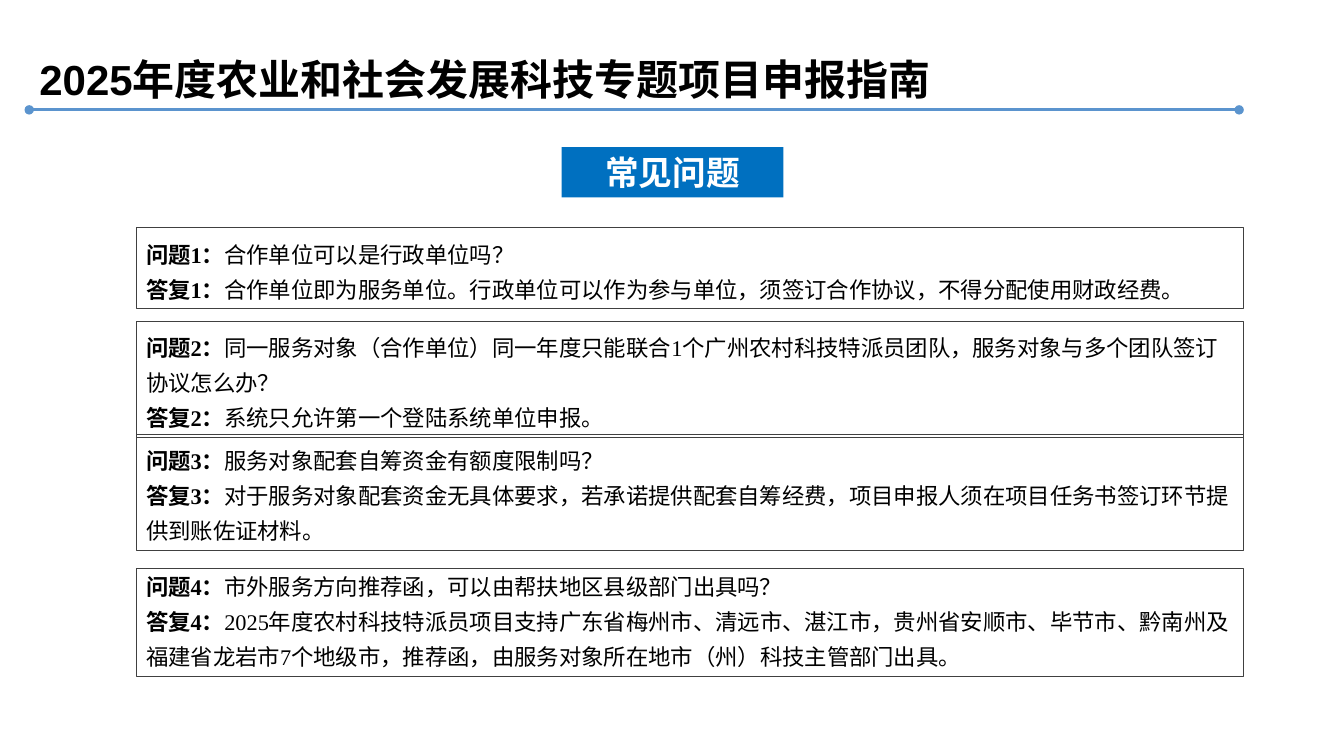
from lxml.etree import SubElement
from pptx import Presentation
from pptx.dml.color import RGBColor
from pptx.enum.shapes import MSO_CONNECTOR, MSO_SHAPE
from pptx.enum.text import MSO_ANCHOR, MSO_AUTO_SIZE, PP_ALIGN
from pptx.oxml.ns import qn
from pptx.util import Inches, Pt

COLORS = {"text": "000000", "rule": "5B94CE", "banner": "0070C0",
          "banner_text": "FFFFFF", "border": "404040"}
HEADING_FONT, BODY_FONT = "Arial", "Times New Roman"
TITLE = "2025年度农业和社会发展科技专题项目申报指南"
CARD_LEFT, CARD_WIDTH = 1.35, 10.98

# top, height, line spacing of the question, question, answer
FAQ = [
    (2.26, 0.8, 1.3, "合作单位可以是行政单位吗？",
     "合作单位即为服务单位。行政单位可以作为参与单位，须签订合作协议，不得分配使用财政经费。"),
    (3.19, 1.15, 1.3,
     "同一服务对象（合作单位）同一年度只能联合1个广州农村科技特派员团队，服务对象与多个团队签订协议怎么办？",
     "系统只允许第一个登陆系统单位申报。"),
    (4.31, 1.15, 1.3, "服务对象配套自筹资金有额度限制吗？",
     "对于服务对象配套资金无具体要求，若承诺提供配套自筹经费，项目申报人须在项目任务书签订环节提供到账佐证材料。"),
    (5.64, 1.07, 1.0, "市外服务方向推荐函，可以由帮扶地区县级部门出具吗？",
     "2025年度农村科技特派员项目支持广东省梅州市、清远市、湛江市，贵州省安顺市、毕节市、黔南州"
     "及福建省龙岩市7个地级市，推荐函，由服务对象所在地市（州）科技主管部门出具。"),
]


def color(name):
    return RGBColor.from_string(COLORS[name])


def add_run(paragraph, text, size, font, bold=True, ink="text"):
    run = paragraph.add_run()
    run.text = text
    run.font.size, run.font.name, run.font.bold = Pt(size), font, bold
    run.font.color.rgb = color(ink)


def prepare_frame(frame, anchor):
    frame.word_wrap = True
    frame.auto_size = MSO_AUTO_SIZE.NONE
    frame.vertical_anchor = anchor


def add_box(slide, box):
    shape = slide.shapes.add_shape(MSO_SHAPE.RECTANGLE, *map(Inches, box))
    shape.shadow.inherit = False
    return shape


def add_header(slide, left, top, width, height, rule_width):
    """Title with a dot-ended rule along its lower edge."""
    title = slide.shapes.title
    title.left, title.top, title.width, title.height = map(
        Inches, (left, top, width, height))
    prepare_frame(title.text_frame, MSO_ANCHOR.TOP)
    heading = title.text_frame.paragraphs[0]
    heading.alignment, heading.line_spacing = PP_ALIGN.LEFT, 1.5
    add_run(heading, TITLE, 30, HEADING_FONT)

    bottom = Inches(top + height)
    rule = slide.shapes.add_connector(
        MSO_CONNECTOR.STRAIGHT, Inches(left), bottom, Inches(left + rule_width), bottom)
    rule.line.color.rgb, rule.line.width = color("rule"), Pt(2.25)
    for end in ("a:headEnd", "a:tailEnd"):
        SubElement(rule.line._get_or_add_ln(), qn(end), type="oval")
    SubElement(rule._element.spPr, qn("a:effectLst"))


def add_banner(slide, box, text):
    banner = add_box(slide, box)
    banner.fill.solid()
    banner.fill.fore_color.rgb = color("banner")
    banner.line.fill.background()
    prepare_frame(banner.text_frame, MSO_ANCHOR.MIDDLE)
    label = banner.text_frame.paragraphs[0]
    label.alignment = PP_ALIGN.CENTER
    add_run(label, text, 24, HEADING_FONT, ink="banner_text")


def add_faq_card(slide, box, number, question, answer, question_spacing):
    card = add_box(slide, box)
    card.fill.background()
    card.line.color.rgb, card.line.width = color("border"), Pt(0.75)
    frame = card.text_frame
    prepare_frame(frame, MSO_ANCHOR.TOP)
    entries = [(frame.paragraphs[0], "问题", question, question_spacing),
               (frame.add_paragraph(), "答复", answer, 1.3)]
    for paragraph, label, text, spacing in entries:
        paragraph.alignment, paragraph.line_spacing = PP_ALIGN.LEFT, spacing
        add_run(paragraph, f"{label}{number}：", 16, BODY_FONT)
        add_run(paragraph, text, 16, BODY_FONT, bold=False)


def main():
    deck = Presentation()
    deck.slide_width, deck.slide_height = Inches(13.33), Inches(7.5)
    slide = deck.slides.add_slide(deck.slide_layouts[5])
    add_header(slide, 0.29, 0.23, 10.69, 0.86, rule_width=12)
    add_banner(slide, (5.57, 1.46, 2.2, 0.5), "常见问题")
    for number, (top, height, spacing, question, answer) in enumerate(FAQ, 1):
        add_faq_card(slide, (CARD_LEFT, top, CARD_WIDTH, height),
                     number, question, answer, spacing)
    deck.save("out.pptx")


if __name__ == "__main__":
    main()
